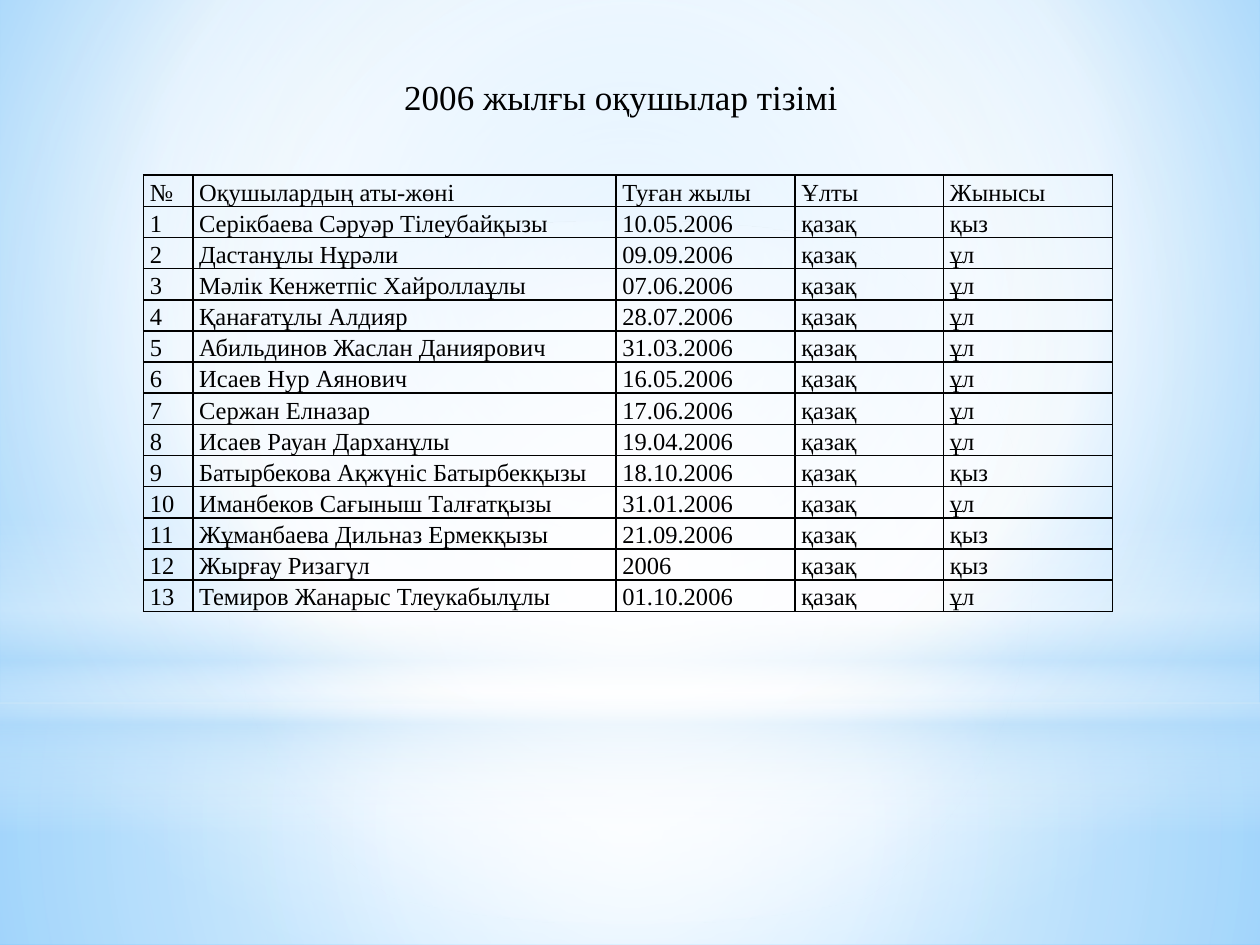
from lxml.etree import SubElement
from pptx import Presentation
from pptx.dml.color import RGBColor
from pptx.enum.shapes import MSO_SHAPE
from pptx.enum.text import MSO_ANCHOR
from pptx.oxml import parse_xml
from pptx.oxml.ns import nsdecls, qn
from pptx.util import Inches, Pt

COLS, ROWS = 100, 75
CENTER = (50, 50, 50, 50)
HEADER = ("№", "Оқушылардың аты-жөні", "Туған жылы", "Ұлты", "Жынысы")
NATION = "қазақ"
PUPILS = [
    ("Серікбаева Сәруәр Тілеубайқызы", "10.05.2006", "қыз"),
    ("Дастанұлы Нұрәли", "09.09.2006", "ұл"),
    ("Мәлік Кенжетпіс Хайроллаұлы", "07.06.2006", "ұл"),
    ("Қанағатұлы Алдияр", "28.07.2006", "ұл"),
    ("Абильдинов Жаслан Даниярович", "31.03.2006", "ұл"),
    ("Исаев Нур Аянович", "16.05.2006", "ұл"),
    ("Сержан Елназар", "17.06.2006", "ұл"),
    ("Исаев Рауан Дарханұлы", "19.04.2006", "ұл"),
    ("Батырбекова Ақжүніс Батырбекқызы", "18.10.2006", "қыз"),
    ("Иманбеков Сағыныш Талғатқызы", "31.01.2006", "ұл"),
    ("Жұманбаева Дильназ Ермекқызы", "21.09.2006", "қыз"),
    ("Жырғау Ризагүл", "2006", "қыз"),
    ("Темиров Жанарыс Тлеукабылұлы", "01.10.2006", "ұл"),
]


def color(text):
    return RGBColor.from_string(text)


def blend(fill, root, stops, focus=None):
    """Fill with (place, colour, opacity) stops: round a focus, or downwards without one."""
    fill.gradient()
    grad = root.find(".//" + qn("a:gradFill"))
    for child in list(grad):
        grad.remove(child)
    grad.set("rotWithShape", "1")
    group = SubElement(grad, qn("a:gsLst"))
    for place, tone, alpha in stops:
        stop = SubElement(group, qn("a:gs"), pos=str(place * 1000))
        paint = SubElement(stop, qn("a:srgbClr"), val=tone)
        if alpha < 100:
            SubElement(paint, qn("a:alpha"), val=str(alpha * 1000))
    if focus:
        way = SubElement(grad, qn("a:path"))
        way.set("path", "circle")
        SubElement(way, qn("a:fillToRect"),
                   {side: str(share * 1000) for side, share in zip("ltrb", focus)})
    else:
        SubElement(grad, qn("a:lin"), ang="5400000", scaled="0")


class Deck:
    """Holds the type style and the current slide; lengths are grid columns and rows."""

    def __init__(self, font, ink):
        self.font, self.ink = font, ink
        self.show = Presentation()
        self.show.slide_width, self.show.slide_height = Inches(10), Inches(7.5)
        self.slide = self.show.slides.add_slide(self.show.slide_layouts[6])

    def col(self, count):
        return round(self.show.slide_width * count / COLS)

    def row(self, count):
        return round(self.show.slide_height * count / ROWS)

    def area(self, x, y, w, h):
        return self.col(x), self.row(y), self.col(w), self.row(h)

    def label(self, frame, text, size):
        para = frame.paragraphs[0]
        para.text = text
        para.font.name, para.font.size = self.font, Pt(size)
        para.font.color.rgb = color(self.ink)
        return para

    def back(self, stops, focus):
        blend(self.slide.background.fill, self.slide.element, stops, focus)

    def glow(self, kind, y, h, stops, focus=CENTER):
        shape = self.slide.shapes.add_shape(kind, *self.area(0, y, COLS, h))
        shape.shadow.inherit = False
        shape.line.fill.background()
        blend(shape.fill, shape.element, stops, focus)

    def title(self, x, y, w, h, text, size):
        frame = self.slide.shapes.add_textbox(*self.area(x, y, w, h)).text_frame
        frame.word_wrap = True
        frame.vertical_anchor = MSO_ANCHOR.MIDDLE
        self.label(frame, text, size)

    def table(self, x, y, widths, high, data, size):
        box = self.area(x, y, sum(widths), high * len(data))
        table = self.slide.shapes.add_table(len(data), len(widths), *box).table
        table.first_row = table.horz_banding = False
        for column, width in zip(table.columns, widths):
            column.width = self.col(width)
        for row, texts in zip(table.rows, data):
            row.height = self.row(high)
            for cell, text in zip(row.cells, texts):
                self.fill_cell(cell, text, size)

    def fill_cell(self, cell, text, size):
        cell.margin_left = cell.margin_right = Inches(0.05)
        cell.margin_top = cell.margin_bottom = 0
        cell.fill.background()
        self.label(cell.text_frame, text, size).line_spacing = 1.15
        props = cell._tc.get_or_add_tcPr()
        for place, side in enumerate("LRTB"):
            props.insert(place, parse_xml(
                f'<a:ln{side} {nsdecls("a")} w="{Pt(1)}"><a:solidFill>'
                f'<a:srgbClr val="{self.ink}"/></a:solidFill></a:ln{side}>'))


def main():
    white, pale = "FFFFFF", "B4DCFA"
    rect = MSO_SHAPE.RECTANGLE
    deck = Deck("Times New Roman", "000000")
    deck.back([(0, "9ED5FF", 100), (60, white, 100), (100, "5BB9FF", 100)],
              (20, 10, 20, 60))
    deck.glow(rect, 55.8, 19.2, [(0, white, 91), (37, white, 76), (100, pale, 79)])
    deck.glow(rect, 0, 55.8, [(0, white, 89), (48, white, 62), (100, pale, 79)])
    deck.glow(rect, 41.2, 25, [(0, white, 0), (29, white, 30), (45, pale, 40),
                               (55, white, 26), (65, pale, 60), (100, white, 0)], None)
    deck.glow(MSO_SHAPE.OVAL, 17.5, 55.8, [(0, white, 100), (56, white, 0)])
    data = [HEADER] + [(str(number), name, born, NATION, sex)
                       for number, (name, born, sex) in enumerate(PUPILS, 1)]
    deck.table(11.4, 13.9, (3.9, 33.6, 14.2, 11.8, 13.4), 2.4, data, 14)
    deck.title(31.1, 5.5, 50, 4.3, "2006 жылғы оқушылар тізімі", 20)
    deck.show.save("out.pptx")


if __name__ == "__main__":
    main()
